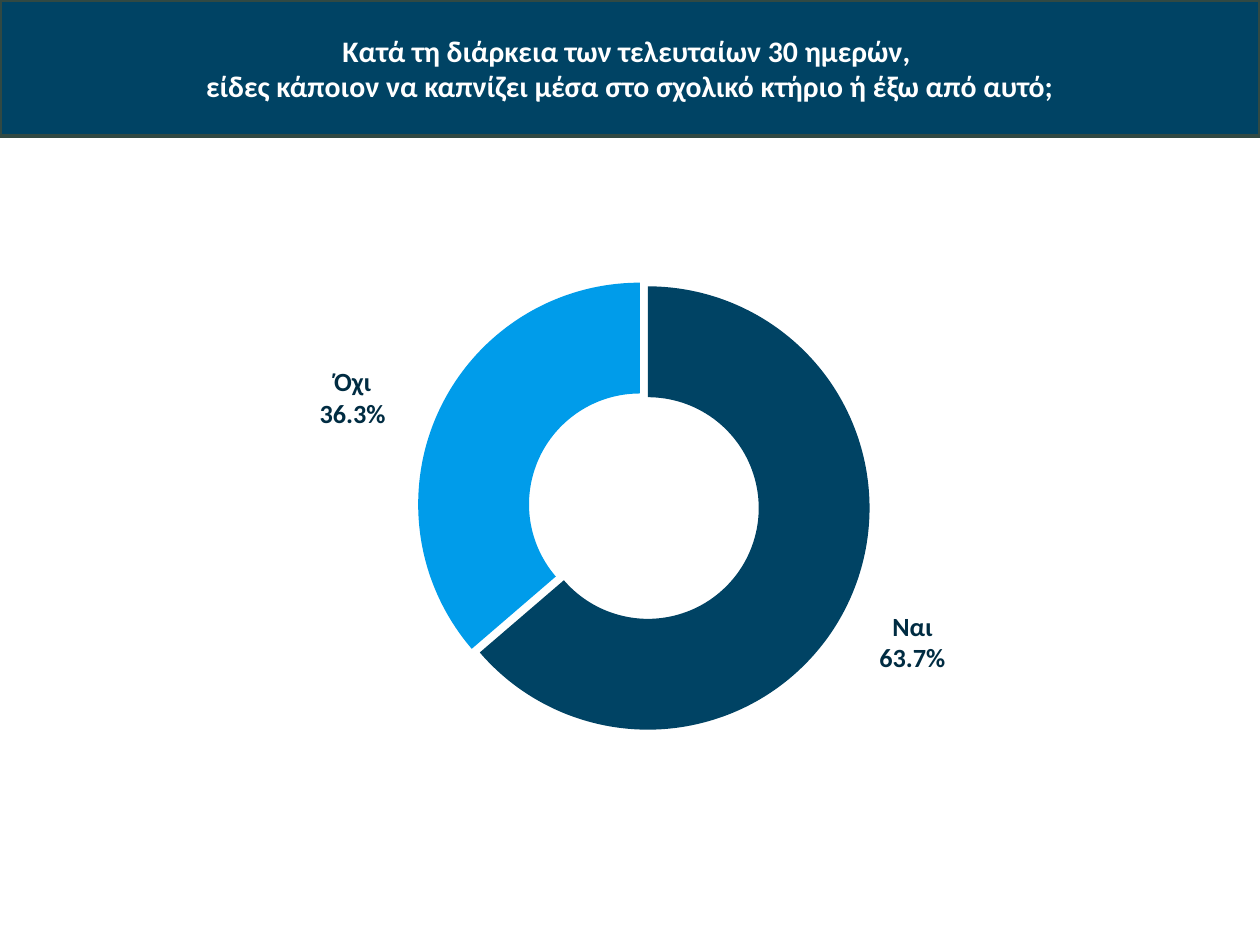
from copy import deepcopy

from lxml.etree import SubElement
from pptx import Presentation
from pptx.chart.data import CategoryChartData
from pptx.dml.color import RGBColor
from pptx.enum.chart import XL_CHART_TYPE
from pptx.enum.text import MSO_ANCHOR, PP_ALIGN
from pptx.oxml import parse_xml
from pptx.oxml.ns import nsdecls, qn
from pptx.util import Inches, Pt

COLORS = {"navy": "004364", "sky": "009CEA", "border": "314943",
          "label": "002C42", "white": "FFFFFF", "black": "000000"}
FONT = "Calibri"
QUESTION = ("Κατά τη διάρκεια των τελευταίων 30 ημερών, \v"
            "είδες κάποιον να καπνίζει μέσα στο σχολικό κτήριο ή έξω από αυτό;")
ANSWERS = [
    {"name": "Ναι", "share": 63.7, "color": "navy", "explosion": 2, "offset": (0.1, 0.09)},
    {"name": "Όχι", "share": 36.3, "color": "sky", "explosion": 6, "offset": (-0.12, -0.05)},
]


def color(name):
    """Return the named palette colour."""
    return RGBColor.from_string(COLORS[name])


def style_font(font, size, color_name, bold=False):
    """Apply the slide's typeface with a size, colour and weight."""
    font.name, font.size, font.bold = FONT, Pt(size), bold
    font.color.rgb = color(color_name)


def manual_layout(x, y, size=None):
    """Return a chart layout element, with an inner plot size if one is given."""
    values = {"x": x, "y": y}
    if size:
        values = {"layoutTarget": "inner", "xMode": "edge", "yMode": "edge",
                  **values, "w": size[0], "h": size[1]}
    items = "".join(f'<c:{tag} val="{value}"/>' for tag, value in values.items())
    return parse_xml(f'<c:layout {nsdecls("c")}><c:manualLayout>{items}</c:manualLayout></c:layout>')


def add_header(slide, left, top, width, height):
    """Format the title placeholder as a filled banner with the question."""
    title = slide.shapes.title
    title.left, title.top, title.width, title.height = left, top, width, height
    title.fill.solid()
    title.fill.fore_color.rgb = color("navy")
    title.line.color.rgb = color("border")
    title.line.width = Pt(2)
    title.text_frame.text = QUESTION
    title.text_frame.vertical_anchor = MSO_ANCHOR.MIDDLE
    paragraph = title.text_frame.paragraphs[0]
    paragraph.alignment = PP_ALIGN.CENTER
    style_font(paragraph.font, 17, "white", bold=True)


def style_labels(plot):
    """Show each category and percentage, moved outside the ring."""
    labels = plot.series[0].data_labels
    style_font(labels.font, 15, "label", bold=True)
    labels.number_format = "0.0%"
    labels.number_format_is_linked = False
    labels.show_value = False
    labels.show_category_name = labels.show_percentage = True
    element = labels._element
    for tag in ("c:showLeaderLines", "c:separator"):
        for child in element.findall(qn(tag)):
            element.remove(child)
    SubElement(element, qn("c:separator")).text = "\n"
    shared = [deepcopy(child) for child in element]
    SubElement(element, qn("c:showLeaderLines")).set("val", "0")
    for index, answer in enumerate(ANSWERS):
        label = parse_xml(f'<c:dLbl {nsdecls("c")}><c:idx val="{index}"/></c:dLbl>')
        label.append(manual_layout(*answer["offset"]))
        label.extend(deepcopy(shared))
        element.insert(index, label)


def add_answer_chart(slide, left, top, width, height):
    """Draw the answers as a doughnut chart with separated slices."""
    data = CategoryChartData(number_format="0.0")
    data.categories = [answer["name"] for answer in ANSWERS]
    data.add_series("Series 1", [answer["share"] for answer in ANSWERS])
    chart = slide.shapes.add_chart(XL_CHART_TYPE.DOUGHNUT, left, top, width, height, data).chart
    chart.has_legend = chart.has_title = False
    style_font(chart.font, 18, "black")
    plot = chart.plots[0]
    plot.vary_by_categories = True
    plot._element.find(qn("c:holeSize")).set("val", "34")
    for index, answer in enumerate(ANSWERS):
        fill = plot.series[0].points[index].format.fill
        fill.solid()
        fill.fore_color.rgb = color(answer["color"])
    for point, answer in zip(plot._element.iter(qn("c:dPt")), ANSWERS):
        explosion = parse_xml(f'<c:explosion {nsdecls("c")} val="{answer["explosion"]}"/>')
        point.find(qn("c:spPr")).addprevious(explosion)
    style_labels(plot)
    plot_area = plot._element.getparent()
    for layout in plot_area.findall(qn("c:layout")):
        plot_area.remove(layout)
    plot_area.insert(0, manual_layout(0.313, 0.148, (0.391, 0.609)))


def main():
    """Build and save the slide."""
    presentation = Presentation()
    presentation.slide_width, presentation.slide_height = Inches(10), Inches(7.5)
    slide = presentation.slides.add_slide(presentation.slide_layouts[5])
    add_header(slide, 0, 0, presentation.slide_width, Inches(1.08))
    add_answer_chart(slide, Inches(0.55), Inches(1.41), Inches(9), Inches(5.78))
    presentation.save("out.pptx")


if __name__ == "__main__":
    main()
